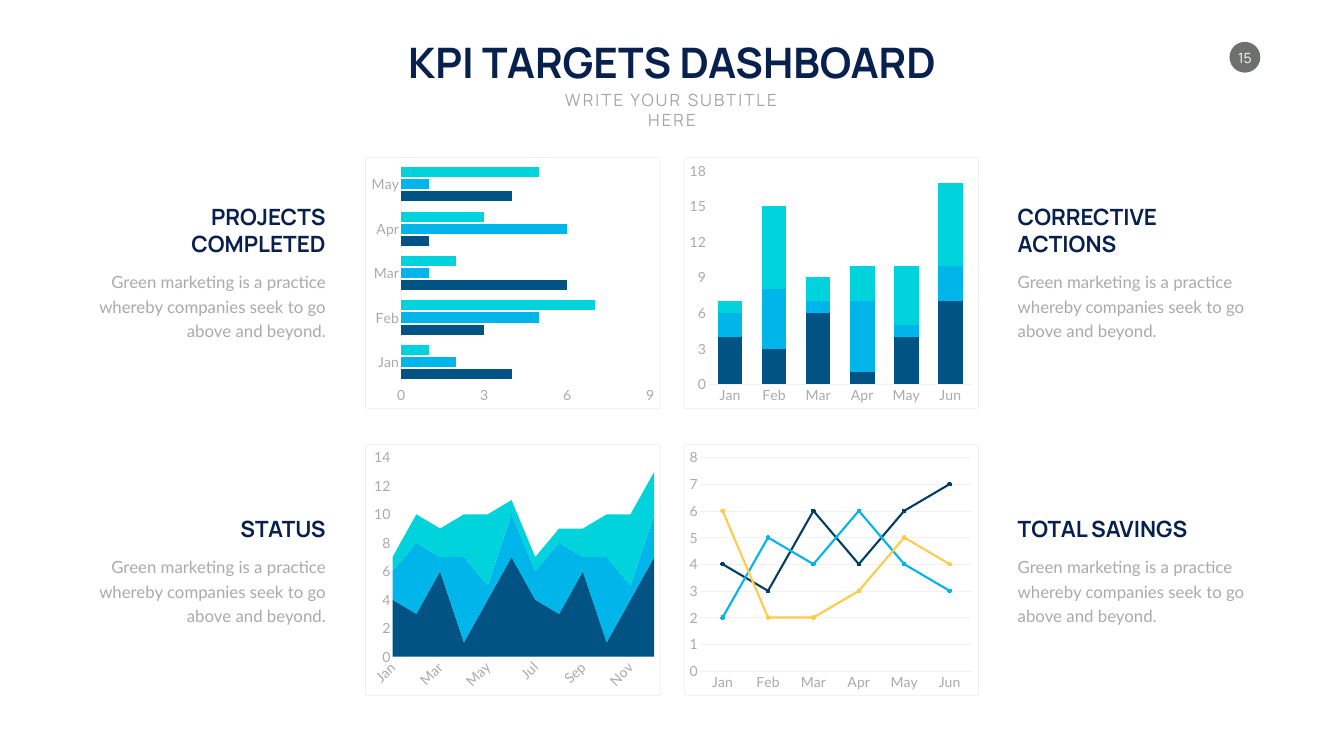
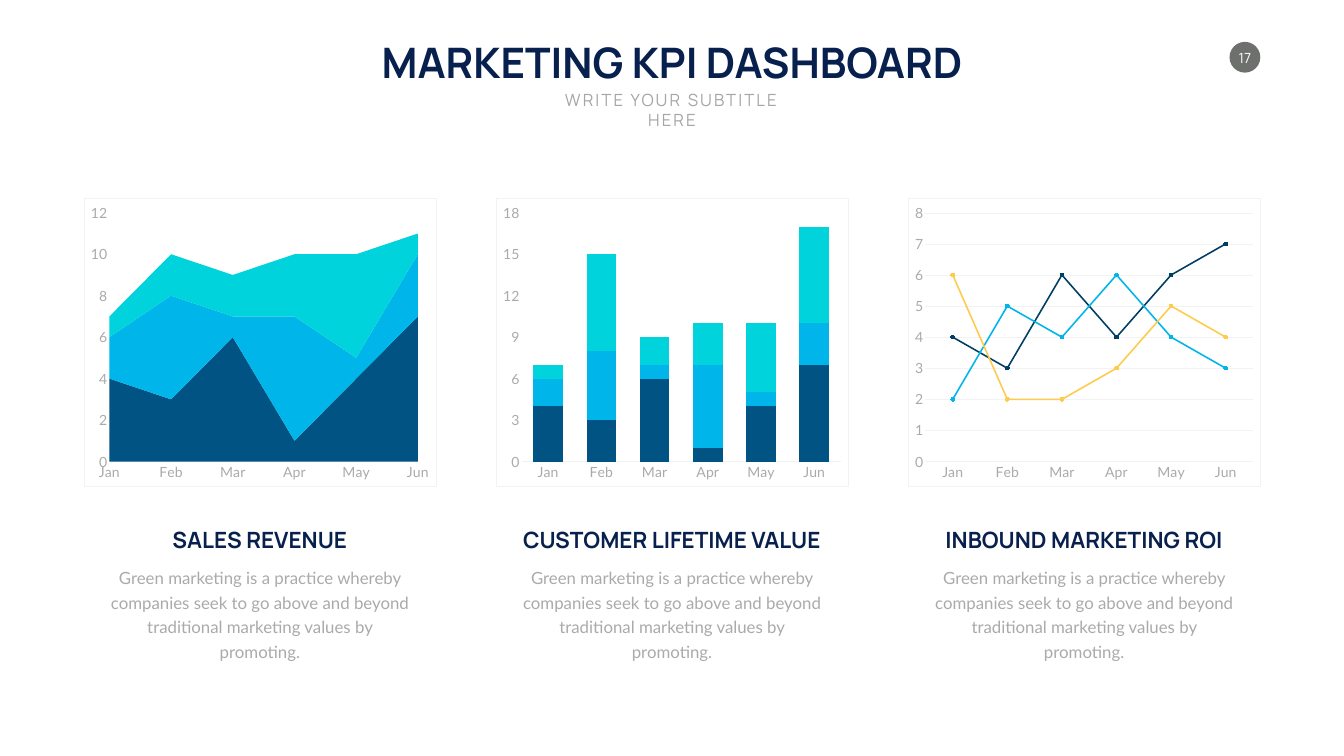
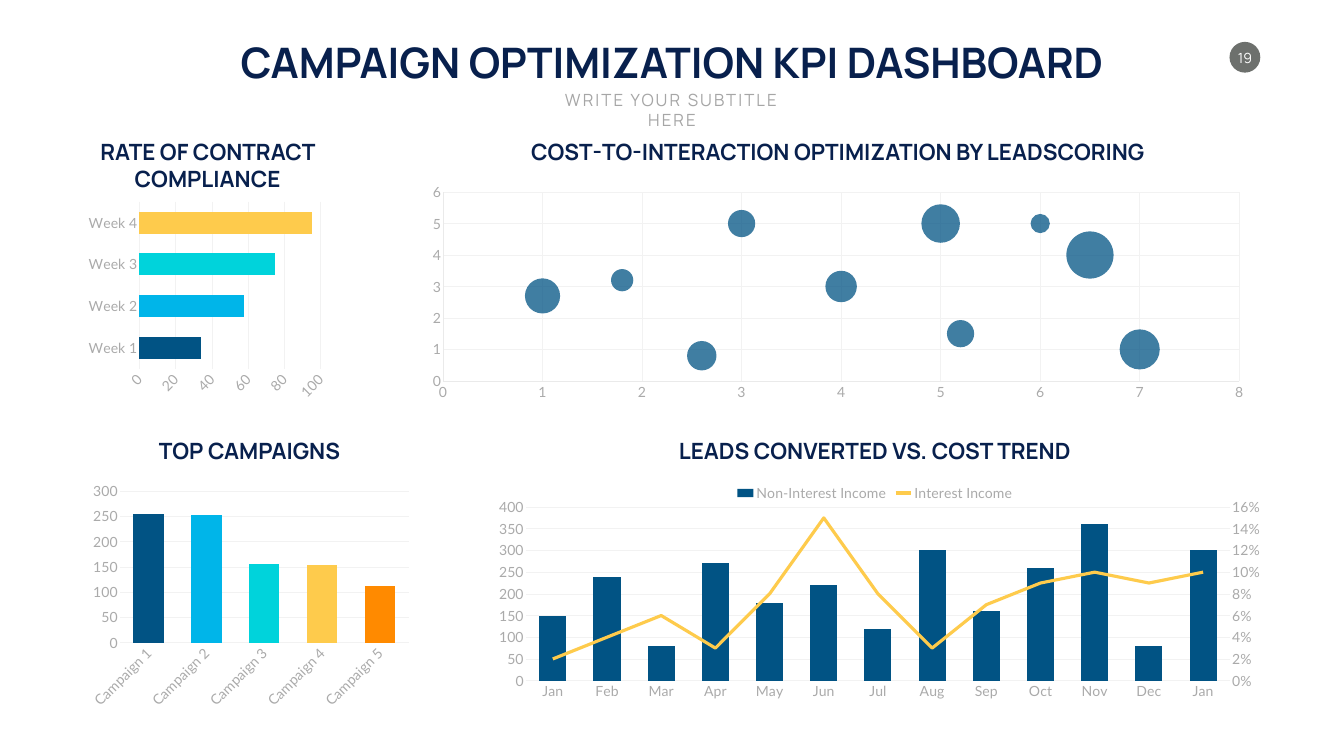
"""Build three KPI dashboard slides with native charts."""
from dataclasses import dataclass, replace
from typing import Any, NamedTuple

from pptx import Presentation
from pptx.chart.axis import ValueAxis
from pptx.chart.chart import Chart
from pptx.chart.data import BubbleChartData, CategoryChartData
from pptx.dml.color import RGBColor
from pptx.enum.chart import XL_CHART_TYPE as ChartType
from pptx.enum.chart import XL_LEGEND_POSITION as LegendPosition
from pptx.enum.chart import XL_MARKER_STYLE as MarkerStyle
from pptx.enum.chart import XL_TICK_MARK as TickMark
from pptx.enum.shapes import MSO_SHAPE as ShapeKind
from pptx.enum.text import MSO_ANCHOR as Anchor
from pptx.enum.text import MSO_AUTO_SIZE as AutoSize
from pptx.enum.text import PP_ALIGN as Align
from pptx.oxml import parse_xml
from pptx.oxml.ns import nsdecls, qn
from pptx.slide import Slide
from pptx.util import Pt

PAGE_WIDTH, PAGE_HEIGHT = 1919.52, 1080
MARGIN = 119.5
NAVY, MUTED, SUBTITLE_GREY, BADGE_GREY = "08204D", "AAAAAA", "A6A6A6", "6D706D"
PALE, BUBBLE_AXIS, WHITE = "F2F2F2", "EAEAEA", "FFFFFF"
BLUE, SKY, TEAL, YELLOW, ORANGE, INK = (
    "015384", "00B5E9", "00D3DB", "FECB4C", "FF8A00", "013E63")
HEADING_FONT, BODY_FONT = "Manrope", "Lato"
MONTHS = ("Jan", "Feb", "Mar", "Apr", "May", "Jun",
          "Jul", "Aug", "Sep", "Oct", "Nov", "Dec")
HALF_YEAR = MONTHS[:6]
SHORT_BODY = ("Green marketing is a practice whereby companies "
              "seek to go above and beyond.")
LONG_BODY = ("Green marketing is a practice whereby companies seek to go above "
             "and beyond traditional marketing values by promoting.")


class Box(NamedTuple):
    """Position and size in points."""
    left: float
    top: float
    width: float
    height: float

    def lengths(self) -> list[Pt]:
        """Return the four values as lengths."""
        return [Pt(value) for value in self]


class Series(NamedTuple):
    """A named row of chart values."""
    name: str
    values: tuple[float, ...]
    color: str
    number_format: str = "General"


@dataclass(frozen=True)
class TextStyle:
    """Look of a text box."""
    font: str
    size: float
    color: str
    bold: bool = False
    align: Align = Align.CENTER
    anchor: Anchor = Anchor.TOP
    wrap: bool = True
    spacing: float = 0
    line_height: float = 0
    inset: bool = True


@dataclass(frozen=True)
class ChartDesign:
    """Content and look of a chart."""
    kind: ChartType
    categories: tuple[str, ...]
    series: tuple[Series, ...]
    gap: int | None = None
    overlap: int = 0
    major: float | None = None
    grid: bool = False
    border: bool = True
    tilted_axis: str = ""
    line_width: float = 3
    point_colors: tuple[str, ...] = ()


class Block(NamedTuple):
    """A heading over a body text, placed by the bottom of the heading."""
    left: float
    bottom: float
    heading: str
    align: Align
    lines: int = 1


TITLE = TextStyle(HEADING_FONT, 60, NAVY, bold=True, wrap=False)
SUBTITLE = TextStyle(HEADING_FONT, 24, SUBTITLE_GREY, spacing=3)
NUMBER = TextStyle(HEADING_FONT, 20, WHITE, anchor=Anchor.MIDDLE, wrap=False, inset=False)
HEADING = TextStyle(HEADING_FONT, 32, NAVY, bold=True, anchor=Anchor.BOTTOM)
BODY = TextStyle(BODY_FONT, 24, MUTED, line_height=35)


def named_series(colors: tuple[str, ...], *rows: tuple[float, ...]) -> tuple[Series, ...]:
    """Name the rows Series 1, Series 2 and so on."""
    return tuple(Series(f"Series {number}", row, color)
                 for number, (row, color) in enumerate(zip(rows, colors), 1))


FIRST, SECOND, THIRD = (4, 3, 6, 1, 4, 7), (2, 5, 1, 6, 1, 3), (1, 7, 2, 3, 5, 7)
AREA_THIRD = (1, 2, 2, 3, 5, 1)
BLUES = (BLUE, SKY, TEAL)

STACKED_COLUMNS = ChartDesign(
    ChartType.COLUMN_STACKED, HALF_YEAR, named_series(BLUES, FIRST, SECOND, THIRD),
    gap=80, overlap=100, major=3)
PROJECT_BARS = ChartDesign(
    ChartType.BAR_CLUSTERED, MONTHS[:5],
    named_series(BLUES, FIRST[:5], SECOND[:5], THIRD[:5]), gap=100, overlap=-20, major=3)
HALF_YEAR_AREA = ChartDesign(
    ChartType.AREA_STACKED, HALF_YEAR, named_series(BLUES, FIRST, SECOND, AREA_THIRD))
FULL_YEAR_AREA = ChartDesign(
    ChartType.AREA_STACKED, MONTHS,
    named_series(BLUES, FIRST * 2, SECOND * 2, AREA_THIRD + (1, 1, 2, 3, 5, 3)),
    tilted_axis="category_axis")
TREND_LINES = ChartDesign(
    ChartType.LINE_MARKERS, HALF_YEAR,
    named_series((INK, SKY, YELLOW), (4, 3, 6, 4, 6, 7), (2, 5, 4, 6, 4, 3),
                 (6, 2, 2, 3, 5, 4)), major=1, grid=True)
COMPLIANCE_BARS = ChartDesign(
    ChartType.BAR_CLUSTERED, tuple(f"Week {week}" for week in range(1, 5)),
    named_series((SKY,), (34, 58, 75, 95)), gap=90, grid=True, border=False,
    tilted_axis="value_axis", point_colors=(BLUE, SKY, TEAL, YELLOW))
CAMPAIGN_COLUMNS = ChartDesign(
    ChartType.COLUMN_CLUSTERED, tuple(f"Campaign {number}" for number in range(1, 6)),
    named_series((SKY,), (255, 252, 155, 153, 113)), gap=90, grid=True, border=False,
    tilted_axis="category_axis", point_colors=(BLUE, SKY, TEAL, YELLOW, ORANGE))
LEADS_AND_COST = ChartDesign(
    ChartType.COLUMN_CLUSTERED, MONTHS + ("Jan",),
    (Series("Non-Interest Income",
            (150, 240, 80, 270, 180, 220, 120, 300, 160, 260, 360, 80, 300), BLUE),
     Series("Interest Income",
            (0.02, 0.04, 0.06, 0.03, 0.08, 0.15, 0.08, 0.03, 0.07, 0.09, 0.1, 0.09, 0.1),
            YELLOW, "0%")),
    gap=100, grid=True, border=False, line_width=4.5)
LEAD_BUBBLES = ((1, 2.7, 10), (1.8, 3.2, 4), (2.6, 0.8, 7), (6, 5, 3), (4, 3, 8),
                (7, 1, 13), (5, 5, 12), (3, 5, 6), (6.5, 4, 18), (5.2, 1.5, 6))


def hex_color(value: str) -> RGBColor:
    """Turn a hex string into a colour."""
    return RGBColor.from_string(value)


def apply(target: Any, formats: dict[str, Any]) -> None:
    """Set each format value on the target."""
    for name, value in formats.items():
        setattr(target, name, value)


def set_font(font: Any, name: str, size: float, color: str, bold: bool = False) -> None:
    """Give a font its face, size and colour."""
    apply(font, {"name": name, "size": Pt(size), "bold": bold})
    font.color.rgb = hex_color(color)


def set_fill(fill: Any, color: str) -> None:
    """Fill with one colour."""
    fill.solid()
    fill.fore_color.rgb = hex_color(color)


def set_line(line: Any, color: str, width: float = 0.75) -> None:
    """Draw a line in one colour."""
    set_fill(line.fill, color)
    line.width = Pt(width)


def add_text(slide: Slide, text: str, box: Box, style: TextStyle) -> None:
    """Add a text box of one paragraph."""
    frame = slide.shapes.add_textbox(*box.lengths()).text_frame
    formats = {"word_wrap": style.wrap, "auto_size": AutoSize.SHAPE_TO_FIT_TEXT,
               "vertical_anchor": style.anchor}
    if not style.inset:
        sides = ("left", "top", "right", "bottom")
        formats |= {f"margin_{side}": Pt(0) for side in sides}
    apply(frame, formats)
    paragraph = frame.paragraphs[0]
    paragraph.alignment = style.align
    if style.line_height:
        paragraph.line_spacing = Pt(style.line_height)
    run = paragraph.add_run()
    run.text = text
    set_font(run.font, style.font, style.size, style.color, style.bold)
    if style.spacing:
        run._r.get_or_add_rPr().set("spc", str(round(style.spacing * 100)))


def add_heading(slide: Slide, text: str, left: float, bottom: float, width: float,
                lines: int = 1, align: Align = Align.CENTER) -> None:
    """Add a heading that stands on its bottom edge."""
    height = 46 + 39 * (lines - 1)
    add_text(slide, text, Box(left, bottom - height, width, height),
             replace(HEADING, align=align))


def add_block(slide: Slide, block: Block, width: float, body: str) -> None:
    """Add a heading with its body text below."""
    add_heading(slide, block.heading, block.left, block.bottom, width,
                block.lines, block.align)
    add_text(slide, body, Box(block.left, block.bottom + 8, width, 109.5),
             replace(BODY, align=block.align))


def add_page(presentation: Any, title: str, title_width: float, number: int) -> Slide:
    """Add a slide with the shared badge, title and subtitle."""
    slide = presentation.slides.add_slide(presentation.slide_layouts[6])
    set_fill(slide.background.fill, WHITE)
    badge = slide.shapes.add_shape(ShapeKind.OVAL, *Box(1756, 59.8, 44, 44).lengths())
    badge.shadow.inherit = False
    set_fill(badge.fill, BADGE_GREY)
    badge.line.fill.background()
    add_text(slide, str(number), Box(1763.3, 69.8, 29.5, 24.5), NUMBER)
    add_text(slide, title,
             Box((PAGE_WIDTH - title_width) / 2, 48, title_width, 80), TITLE)
    add_text(slide, "WRITE YOUR SUBTITLE HERE",
             Box((PAGE_WIDTH - 391) / 2, 124, 391, 36), SUBTITLE)
    return slide


def style_axis(axis: Any, line: str = "", grid: bool = False, tilted: bool = False) -> None:
    """Style the labels, line and grid of an axis."""
    apply(axis, {"major_tick_mark": TickMark.NONE, "minor_tick_mark": TickMark.NONE,
                 "has_major_gridlines": grid, "has_minor_gridlines": False})
    set_font(axis.tick_labels.font, BODY_FONT, 20, MUTED)
    if line:
        set_line(axis.format.line, line)
    else:
        axis.format.line.fill.background()
    if grid:
        set_line(axis.major_gridlines.format.line, PALE)
    if tilted:
        body = axis._element.find(qn("c:txPr")).find(qn("a:bodyPr"))
        body.set("rot", "-2700000")
        body.set("vert", "horz")


def style_frame(chart: Chart, border: bool) -> None:
    """Set the chart font and the outline of the chart area."""
    apply(chart, {"has_title": False, "has_legend": False})
    set_font(chart.font, BODY_FONT, 20, MUTED)
    paint = (f'<a:solidFill><a:srgbClr val="{PALE}"/></a:solidFill>'
             if border else "<a:noFill/>")
    chart.element.find(qn("c:chart")).addnext(parse_xml(
        f'<c:spPr {nsdecls("c", "a")}><a:noFill/>'
        f'<a:ln w="{Pt(0.75)}">{paint}</a:ln></c:spPr>'))


def style_series(series: Any, design: ChartDesign, color: str, is_line: bool) -> None:
    """Colour a series and its single points."""
    if not is_line:
        set_fill(series.format.fill, color)
        for index, point_color in enumerate(design.point_colors):
            set_fill(series.points[index].format.fill, point_color)
        return
    series.smooth = False
    set_line(series.format.line, color, design.line_width)
    if design.kind == ChartType.LINE_MARKERS:
        apply(series.marker, {"style": MarkerStyle.CIRCLE, "size": 5})
        set_fill(series.marker.format.fill, color)
        set_line(series.marker.format.line, color)
    else:
        series.marker.style = MarkerStyle.NONE


def move_to_right_axis(chart: Chart) -> None:
    """Turn the last column series into a line on a right axis."""
    bars = chart.element.find(".//" + qn("c:barChart"))
    row = bars.findall(qn("c:ser"))[-1]
    for flag in row.findall(qn("c:invertIfNegative")):
        row.remove(flag)
    lines = parse_xml(
        f'<c:lineChart {nsdecls("c")}><c:grouping val="standard"/><c:varyColors val="0"/>'
        '<c:marker val="1"/><c:axId val="7001"/><c:axId val="7002"/></c:lineChart>')
    lines.insert(2, row)
    bars.addnext(lines)
    previous = chart.value_axis._element
    axes = (
        ("catAx", 7001, 7002, 1, "b", "", "autoZero"),
        ("valAx", 7002, 7001, 0, "r", '<c:numFmt formatCode="0%" sourceLinked="0"/>', "max"))
    for tag, axis_id, cross_id, hidden, side, number_format, crossing in axes:
        axis = parse_xml(
            f'<c:{tag} {nsdecls("c")}><c:axId val="{axis_id}"/>'
            '<c:scaling><c:orientation val="minMax"/></c:scaling>'
            f'<c:delete val="{hidden}"/><c:axPos val="{side}"/>{number_format}'
            '<c:tickLblPos val="nextTo"/>'
            f'<c:crossAx val="{cross_id}"/><c:crosses val="{crossing}"/></c:{tag}>')
        previous.addnext(axis)
        previous = axis
    previous.append(parse_xml(f'<c:crossBetween {nsdecls("c")} val="between"/>'))
    style_axis(ValueAxis(previous))


def place_plot(chart: Chart, left: float, top: float, width: float, height: float) -> None:
    """Fix the inner plot area as shares of the chart."""
    area = chart.element.find(".//" + qn("c:plotArea"))
    for layout in area.findall(qn("c:layout")):
        area.remove(layout)
    sizes = "".join(f'<c:{name} val="{value}"/>' for name, value in
                    zip("xywh", (left, top, width, height)))
    area.insert(0, parse_xml(
        f'<c:layout {nsdecls("c")}><c:manualLayout><c:layoutTarget val="inner"/>'
        f'<c:xMode val="edge"/><c:yMode val="edge"/>{sizes}</c:manualLayout></c:layout>'))


def add_chart(slide: Slide, design: ChartDesign, box: Box, combined: bool = False) -> Chart:
    """Add a category chart, with a line on a right axis if combined."""
    data = CategoryChartData()
    data.categories = design.categories
    for row in design.series:
        data.add_series(row.name, row.values, row.number_format)
    chart = slide.shapes.add_chart(design.kind, *box.lengths(), data).chart
    style_frame(chart, design.border)
    style_axis(chart.category_axis, PALE, tilted=design.tilted_axis == "category_axis")
    style_axis(chart.value_axis, grid=design.grid, tilted=design.tilted_axis == "value_axis")
    if design.major:
        chart.value_axis.major_unit = design.major
    if design.kind == ChartType.AREA_STACKED:
        for crossing in chart.element.iter(qn("c:crossBetween")):
            crossing.set("val", "midCat")
    if combined:
        move_to_right_axis(chart)
    colors = iter(row.color for row in design.series)
    for index, plot in enumerate(chart.plots):
        plot.vary_by_categories = False
        is_line = design.kind == ChartType.LINE_MARKERS or index == 1
        for series in plot.series:
            style_series(series, design, next(colors), is_line)
    if design.gap is not None:
        apply(chart.plots[0], {"gap_width": design.gap, "overlap": design.overlap})
    return chart


def add_bubbles(slide: Slide, box: Box) -> None:
    """Add the bubble chart of lead scores."""
    data = BubbleChartData()
    row = data.add_series("Series 1")
    for across, up, size in LEAD_BUBBLES:
        row.add_data_point(across, up, size)
    chart = slide.shapes.add_chart(ChartType.BUBBLE, *box.lengths(), data).chart
    style_frame(chart, border=False)
    for axis in (chart.category_axis, chart.value_axis):
        style_axis(axis, BUBBLE_AXIS, grid=True)
        axis.minimum_scale = 0
    series = chart.plots[0].series[0]
    set_fill(series.format.fill, BLUE)
    series.format.line.fill.background()
    color = series._element.find(".//" + qn("a:srgbClr"))
    color.append(parse_xml(f'<a:alpha {nsdecls("a")} val="75000"/>'))


def build_targets(presentation: Any) -> None:
    """Build the dashboard of four charts with side texts."""
    slide = add_page(presentation, "KPI TARGETS DASHBOARD", 796, 15)
    grid = ((PROJECT_BARS, STACKED_COLUMNS), (FULL_YEAR_AREA, TREND_LINES))
    for row, designs in enumerate(grid):
        for column, design in enumerate(designs):
            add_chart(slide, design,
                      Box(522 + 454.3 * column, 224 + 409.6 * row, 421.2, 360))
    left, right, upper, lower = MARGIN, 1446.5, 370.8, 777.6
    for block in (Block(left, upper, "PROJECTS COMPLETED", Align.RIGHT, 2),
                  Block(left, lower, "STATUS", Align.RIGHT),
                  Block(right, upper, "CORRECTIVE ACTIONS", Align.LEFT, 2),
                  Block(right, lower, "TOTAL SAVINGS", Align.LEFT)):
        add_block(slide, block, 352.8, SHORT_BODY)


def build_marketing(presentation: Any) -> None:
    """Build the dashboard of three charts with texts below."""
    slide = add_page(presentation, "MARKETING KPI DASHBOARD", 885, 17)
    columns = (("SALES REVENUE", HALF_YEAR_AREA),
               ("CUSTOMER LIFETIME VALUE", STACKED_COLUMNS),
               ("INBOUND MARKETING ROI", replace(TREND_LINES, line_width=2.25)))
    for index, (heading, design) in enumerate(columns):
        left = MARGIN + 588.6 * index
        add_chart(slide, design, Box(left, 283, 503.3, 412.5))
        add_block(slide, Block(left + 25.2, 793.4, heading, Align.CENTER), 452.9, LONG_BODY)


def build_campaigns(presentation: Any) -> None:
    """Build the dashboard of campaign charts."""
    slide = add_page(presentation, "CAMPAIGN OPTIMIZATION KPI DASHBOARD", 1316, 19)
    add_heading(slide, "RATE OF CONTRACT COMPLIANCE", MARGIN, 278, 354.2, lines=2)
    add_chart(slide, COMPLIANCE_BARS, Box(MARGIN, 282.2, 354.2, 296))
    add_heading(slide, "COST-TO-INTERACTION OPTIMIZATION BY LEADSCORING", 594, 239, 1206)
    add_bubbles(slide, Box(594, 255.6, 1206, 322.6))
    add_heading(slide, "TOP CAMPAIGNS", MARGIN, 666.7, 473.8)
    add_chart(slide, CAMPAIGN_COLUMNS, Box(MARGIN, 682.6, 473.8, 337))
    add_heading(slide, "LEADS CONVERTED VS. COST TREND", 699.1, 666.7, 1100.9)
    chart = add_chart(slide, LEADS_AND_COST, Box(699.1, 682.6, 1100.9, 337), combined=True)
    place_plot(chart, 0.047, 0.124, 0.914, 0.736)
    chart.has_legend = True
    apply(chart.legend, {"position": LegendPosition.TOP, "include_in_layout": False})
    set_font(chart.legend.font, BODY_FONT, 20, MUTED)


def main() -> None:
    """Build and save the presentation."""
    presentation = Presentation()
    apply(presentation, {"slide_width": Pt(PAGE_WIDTH), "slide_height": Pt(PAGE_HEIGHT)})
    for build in (build_targets, build_marketing, build_campaigns):
        build(presentation)
    presentation.save("out.pptx")


if __name__ == "__main__":
    main()
